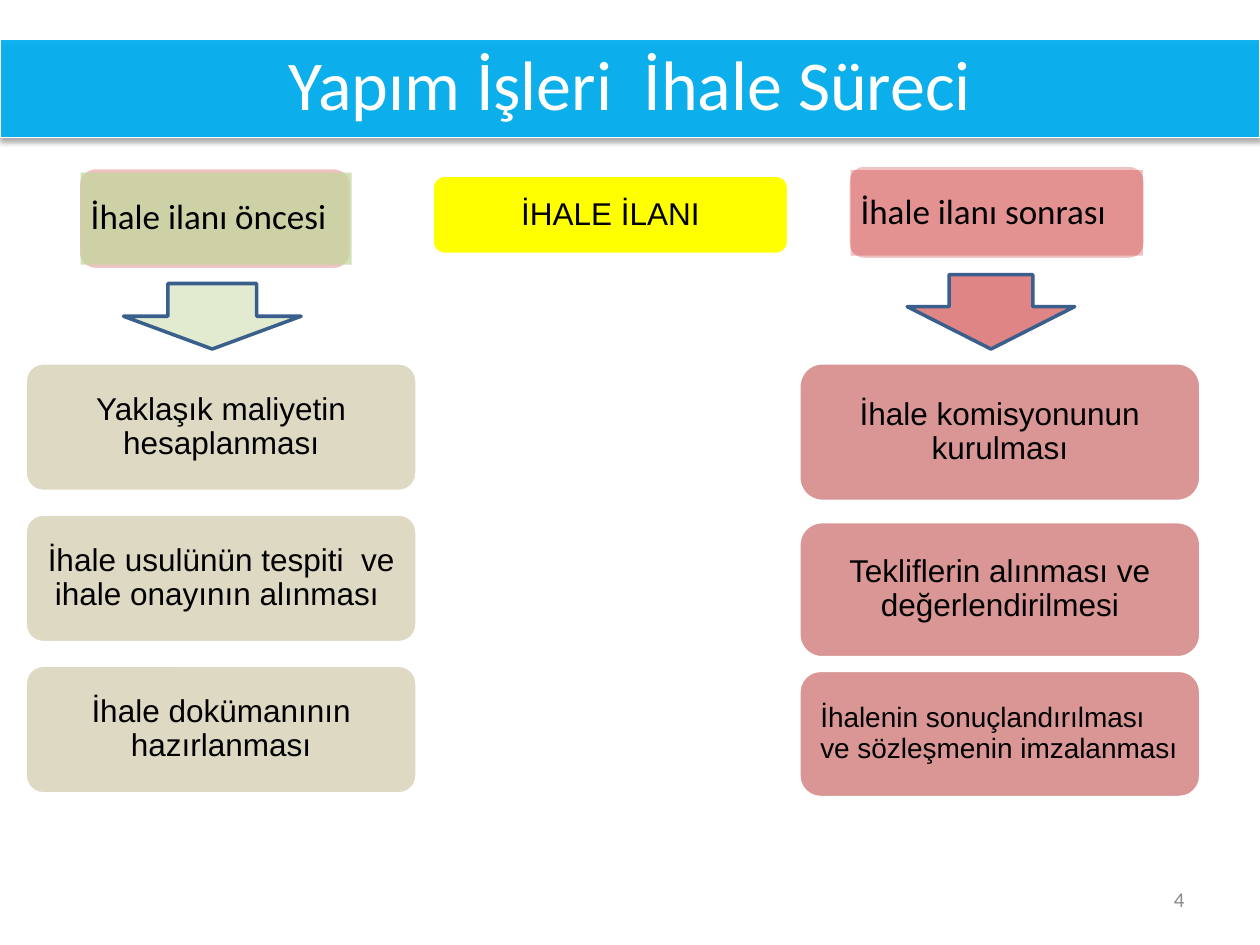
from lxml import etree
from pptx import Presentation
from pptx.dml.color import RGBColor
from pptx.enum.shapes import MSO_SHAPE
from pptx.enum.text import MSO_ANCHOR, MSO_AUTO_SIZE, PP_ALIGN
from pptx.oxml.ns import qn
from pptx.util import Inches, Pt

ROUNDED, RECT, DOWN_ARROW = MSO_SHAPE.ROUNDED_RECTANGLE, MSO_SHAPE.RECTANGLE, MSO_SHAPE.DOWN_ARROW
LEFT, CENTER, RIGHT = PP_ALIGN.LEFT, PP_ALIGN.CENTER, PP_ALIGN.RIGHT
MIDDLE = MSO_ANCHOR.MIDDLE
NO_AUTOFIT = MSO_AUTO_SIZE.NONE

WHITE, BLACK, GRAY, NAVY = "FFFFFF", "000000", "8C8C8C", "3A5F8C"
BLUE, YELLOW, GREEN, RED = "00B0F0", "FFFF00", "C3D69B", "C00000"
BEIGE, ROSE = "DDD9C3", "D99694"

STEPS_BEFORE = [
    "Yaklaşık maliyetin hesaplanması",
    "İhale usulünün tespiti  ve ihale onayının alınması ",
    "İhale dokümanının hazırlanması",
]
STEPS_AFTER = [
    ("İhale komisyonunun kurulması", 2.88, 1.1, 18, CENTER),
    ("Tekliflerin alınması ve değerlendirilmesi", 4.14, 1.08, 18, CENTER),
    ("İhalenin sonuçlandırılması ve sözleşmenin imzalanması", 5.32, 1.01, 16, LEFT),
]


def rgb(value):
    """Turn a hex string into a colour."""
    return RGBColor.from_string(value)


def place(sp, left, top, width, height):
    """Move and size a shape, in inches."""
    sp.left, sp.top, sp.width, sp.height = map(Inches, (left, top, width, height))


def paint(sp, fill, opacity=100, line=None, line_width=2):
    """Set the fill, its opacity and the outline of a shape."""
    sp.fill.solid()
    sp.fill.fore_color.rgb = rgb(fill)
    if opacity < 100:
        color = sp._element.spPr.find(qn("a:solidFill"))[0]
        etree.SubElement(color, qn("a:alpha"), val=str(opacity * 1000))
    if line:
        sp.line.color.rgb = rgb(line)
        sp.line.width = Pt(line_width)
    else:
        sp.line.fill.background()


def add_shadow(sp):
    """Give a shape a soft shadow straight below it."""
    sp.shadow.inherit = False
    effects = sp._element.spPr.find(qn("a:effectLst"))
    shadow = etree.SubElement(effects, qn("a:outerShdw"), blurRad=str(Pt(3.1)),
                              dist=str(Pt(1.8)), dir="5400000", rotWithShape="0")
    color = etree.SubElement(shadow, qn("a:srgbClr"), val=BLACK)
    etree.SubElement(color, qn("a:alpha"), val="35000")


def write(sp, text, size, font="Arial", color=BLACK, align=CENTER, inset=0.12, wrap=True):
    """Put one formatted paragraph in a shape."""
    tf = sp.text_frame
    tf.text = text
    tf.auto_size = NO_AUTOFIT
    tf.word_wrap = wrap
    tf.vertical_anchor = MIDDLE
    tf.margin_left = tf.margin_right = tf.margin_top = tf.margin_bottom = Inches(inset)
    p = tf.paragraphs[0]
    p.alignment = align
    p.line_spacing = 0.9
    r = p.runs[0]
    r.font.size = Pt(size)
    r.font.name = font
    r.font.color.rgb = rgb(color)


def add_block(s, kind, box, fill, opacity=100, line=None, corner=None):
    """Add a painted preset shape without shadow."""
    sp = s.shapes.add_shape(kind, *map(Inches, box))
    sp.shadow.inherit = False
    paint(sp, fill, opacity, line)
    if corner is not None:
        sp.adjustments[0] = corner
    return sp


def add_step(s, text, box, fill, corner, size=18, align=CENTER):
    """Add a rounded box holding one step of the process."""
    sp = add_block(s, ROUNDED, box, fill, line=WHITE, corner=corner)
    write(sp, text, size, align=align)


def add_heading(s, text, frame, panel, fill, opacity):
    """Add a column heading: a rounded frame under a translucent panel."""
    add_block(s, ROUNDED, frame, RED, 24, WHITE, corner=0.17)
    sp = add_block(s, RECT, panel, fill, opacity)
    write(sp, text, 20, "Calibri", align=LEFT, inset=0.08)


def add_title(s, text):
    """Turn the title placeholder into a full-width banner."""
    sp = s.shapes.title
    place(sp, 0, 0.31, 10, 0.78)
    paint(sp, BLUE, 93, WHITE, 0.75)
    add_shadow(sp)
    write(sp, text, 40, "Calibri", WHITE, inset=0.05, wrap=False)


def add_page_number(s, text):
    """Add the page number at the lower right."""
    sp = s.shapes.add_textbox(*map(Inches, (7.17, 6.95, 2.33, 0.4)))
    write(sp, text, 12, "Calibri", GRAY, RIGHT, inset=0.1)


def main():
    """Build the tender process slide."""
    prs = Presentation()
    prs.slide_width, prs.slide_height = Inches(10), Inches(7.5)
    s = prs.slides.add_slide(prs.slide_layouts[5])

    add_title(s, "Yapım İşleri  İhale Süreci")
    for i, text in enumerate(STEPS_BEFORE):
        add_step(s, text, (0.2, 2.88 + 1.2 * i, 3.11, 1.02), BEIGE, 0.14)
    for text, top, height, size, align in STEPS_AFTER:
        add_step(s, text, (6.34, top, 3.19, height), ROSE, 0.17, size, align)

    add_heading(s, "İhale ilanı öncesi", (0.62, 1.33, 2.17, 0.81),
                (0.64, 1.37, 2.15, 0.73), GREEN, 73)
    add_heading(s, "İhale ilanı sonrası", (6.73, 1.31, 2.36, 0.75),
                (6.75, 1.35, 2.32, 0.68), RED, 25)
    add_block(s, DOWN_ARROW, (0.98, 2.25, 1.41, 0.52), GREEN, 47, NAVY)
    arrow = add_block(s, DOWN_ARROW, (7.2, 2.18, 1.33, 0.59), RED, 48, NAVY)
    arrow.adjustments[1] = 0.57
    add_step(s, "İHALE İLANI", (3.43, 1.39, 2.83, 0.63), YELLOW, 0.16)
    add_page_number(s, "4")

    prs.save("out.pptx")


if __name__ == "__main__":
    main()
